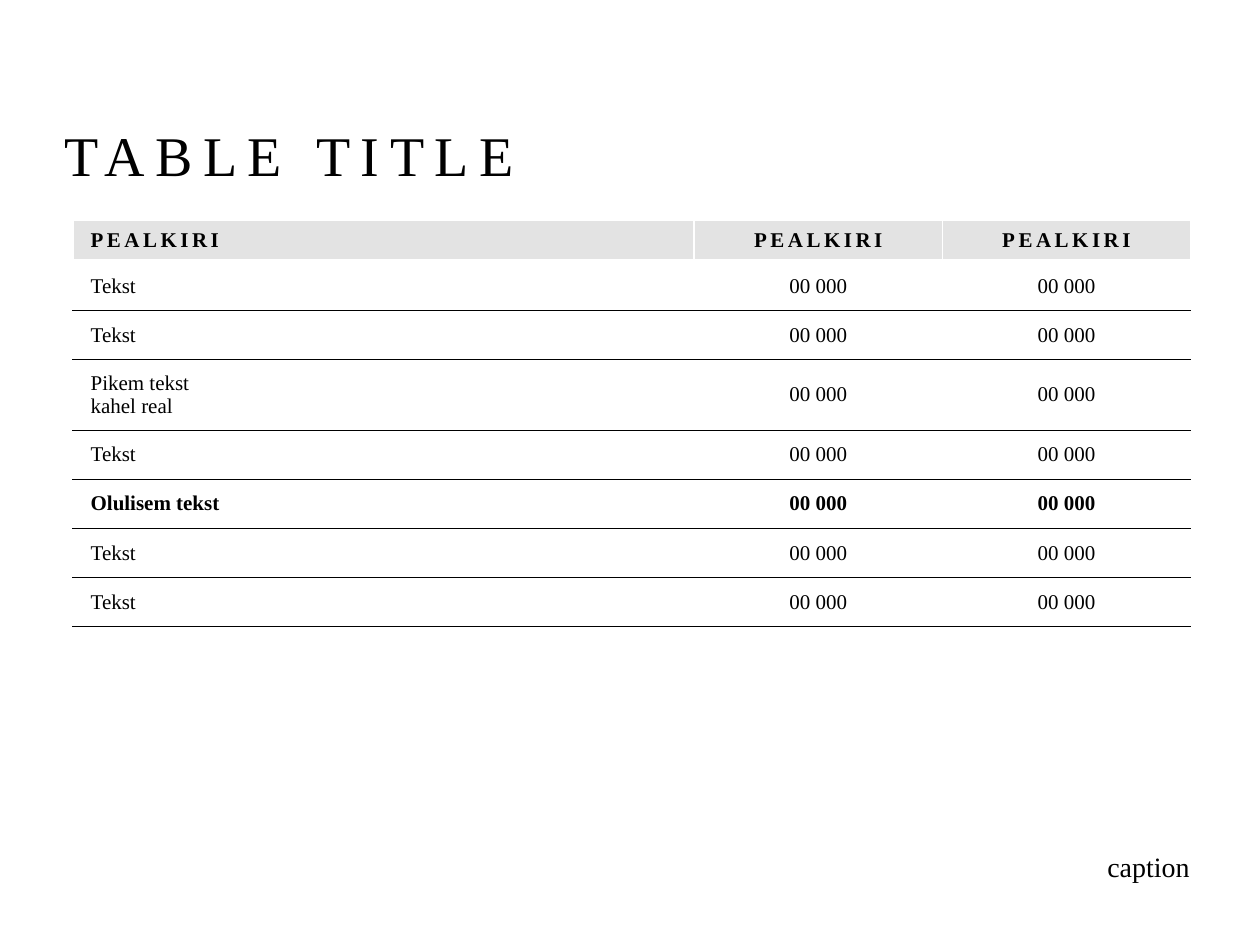
from pptx import Presentation
from pptx.dml.color import RGBColor
from pptx.enum.text import MSO_ANCHOR, MSO_AUTO_SIZE, PP_ALIGN
from pptx.oxml.ns import qn
from pptx.util import Inches, Pt
from lxml import etree

LEFT, CENTER, RIGHT = PP_ALIGN.LEFT, PP_ALIGN.CENTER, PP_ALIGN.RIGHT
TOP, MIDDLE, BOTTOM = MSO_ANCHOR.TOP, MSO_ANCHOR.MIDDLE, MSO_ANCHOR.BOTTOM
NO_AUTOFIT = MSO_AUTO_SIZE.NONE

TITLE = "TABLE TITLE"
CAPTION = "caption"
HEADER = ("PEALKIRI", "PEALKIRI", "PEALKIRI")
ROWS = [
    ("Tekst", "00 000", "00 000"),
    ("Tekst", "00 000", "00 000"),
    ("Pikem tekst\vkahel real", "00 000", "00 000"),
    ("Tekst", "00 000", "00 000"),
    ("Olulisem tekst", "00 000", "00 000"),
    ("Tekst", "00 000", "00 000"),
    ("Tekst", "00 000", "00 000"),
]
EMPHASIZED_ROW = 5

THEME = {
    "font": "Times New Roman",
    "text": "000000",
    "white": "FFFFFF",
    "header": "E3E3E3",
    "title_size": 32,
    "table_size": 12,
    "caption_size": 16,
    "title_spacing": 6,
    "header_spacing": 2,
}

TITLE_BOX = (0.41, 0.3, 9.15, 1.24)
CAPTION_BOX = (3.01, 6.44, 6.53, 0.62)
TABLE_BOX = (0.58, 1.75, 8.87, 3.22)
COLUMN_WIDTHS = (4.93, 1.97, 1.97)
HEADER_HEIGHT, ROW_HEIGHT, TALL_ROW_HEIGHT = 0.3, 0.39, 0.56
CELL_MARGIN_X, CELL_MARGIN_Y = 0.14, 0.07
GRID_LINE, HEADER_LINE, RULE, LAST_RULE = 1, 3, 0.75, 1


def format_text(text_frame, text, size, align=LEFT, bold=False, spacing=0):
    text_frame.text = text
    paragraph = text_frame.paragraphs[0]
    paragraph.alignment = align
    font = paragraph.font
    font.name = THEME["font"]
    font.size = Pt(size)
    font.bold = bold
    font.color.rgb = RGBColor.from_string(THEME["text"])
    if spacing:
        for run in paragraph.runs:
            run.font._element.set("spc", str(spacing * 100))
    return paragraph


def set_borders(cell, top, bottom):
    side = (THEME["white"], GRID_LINE)
    properties = cell._tc.get_or_add_tcPr()
    borders = {"a:lnL": side, "a:lnR": side, "a:lnT": top, "a:lnB": bottom}
    for index, (tag, (color, width)) in enumerate(borders.items()):
        line = etree.Element(qn(tag), w=str(Pt(width)))
        fill = etree.SubElement(line, qn("a:solidFill"))
        etree.SubElement(fill, qn("a:srgbClr"), val=color)
        properties.insert(index, line)


def row_borders(row):
    rules = [(THEME["white"], GRID_LINE), (THEME["white"], HEADER_LINE)]
    rules += [(THEME["text"], RULE)] * (len(ROWS) - 1)
    rules.append((THEME["text"], LAST_RULE))
    return rules[row], rules[row + 1]


def row_height(row, values):
    if row == 0:
        return HEADER_HEIGHT
    return TALL_ROW_HEIGHT if "\v" in values[0] else ROW_HEIGHT


def add_data_table(slide):
    content = [HEADER] + ROWS
    shape = slide.shapes.add_table(len(content), len(HEADER), *map(Inches, TABLE_BOX))
    table = shape.table
    table.horz_banding = False
    for column, width in zip(table.columns, COLUMN_WIDTHS):
        column.width = Inches(width)
    for row, values in enumerate(content):
        is_header = row == 0
        table.rows[row].height = Inches(row_height(row, values))
        for column, value in enumerate(values):
            cell = table.cell(row, column)
            cell.margin_left = cell.margin_right = Inches(CELL_MARGIN_X)
            cell.margin_top = cell.margin_bottom = Inches(CELL_MARGIN_Y)
            cell.vertical_anchor = TOP if is_header else MIDDLE
            format_text(
                cell.text_frame, value, THEME["table_size"],
                align=CENTER if column else LEFT,
                bold=is_header or row == EMPHASIZED_ROW,
                spacing=THEME["header_spacing"] if is_header else 0,
            )
            if is_header:
                cell.fill.solid()
                cell.fill.fore_color.rgb = RGBColor.from_string(THEME["header"])
            else:
                cell.fill.background()
            set_borders(cell, *row_borders(row))


def add_title(slide):
    title = slide.shapes.title
    title.left, title.top, title.width, title.height = map(Inches, TITLE_BOX)
    title.text_frame.auto_size = NO_AUTOFIT
    title.text_frame.vertical_anchor = BOTTOM
    format_text(title.text_frame, TITLE, THEME["title_size"],
                spacing=THEME["title_spacing"])


def add_caption(slide):
    caption = slide.shapes.add_textbox(*map(Inches, CAPTION_BOX))
    caption.text_frame.word_wrap = True
    caption.text_frame.vertical_anchor = BOTTOM
    paragraph = format_text(caption.text_frame, CAPTION,
                            THEME["caption_size"], align=RIGHT)
    paragraph.line_spacing = 1.2


def main():
    presentation = Presentation()
    presentation.slide_width = Inches(10)
    presentation.slide_height = Inches(7.5)
    slide = presentation.slides.add_slide(presentation.slide_layouts.get_by_name("Title Only"))
    add_title(slide)
    add_data_table(slide)
    add_caption(slide)
    presentation.save("out.pptx")


if __name__ == "__main__":
    main()
